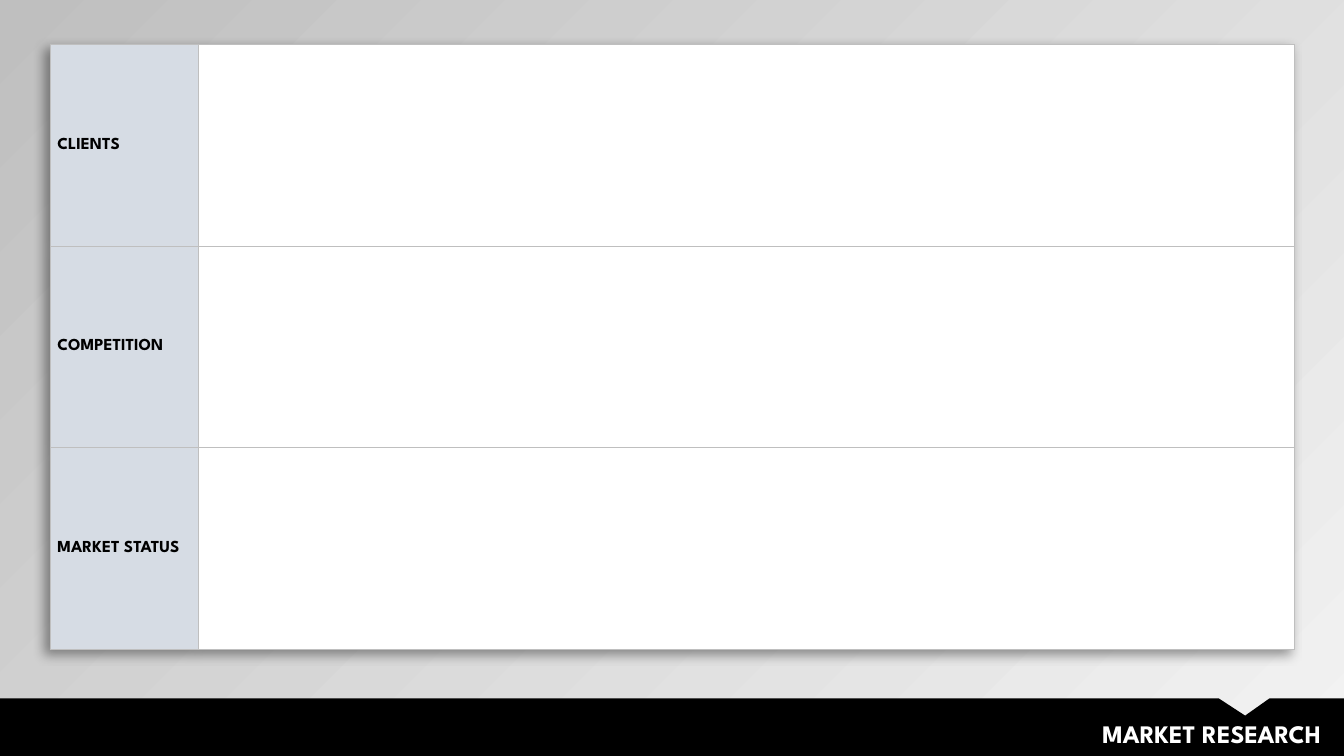
from lxml.etree import SubElement
from pptx import Presentation
from pptx.dml.color import RGBColor
from pptx.enum.text import MSO_ANCHOR as Anchor, MSO_AUTO_SIZE as AutoSize, PP_ALIGN as Align
from pptx.oxml import parse_xml
from pptx.oxml.ns import nsdecls, qn
from pptx.util import Inches, Pt

TITLE = "MARKET RESEARCH"
TOPICS = ["CLIENTS", "COMPETITION", "MARKET STATUS"]
FONT = "League Spartan"
COLORS = {
    "light": "F2F2F2",
    "grey": "BFBFBF",
    "label": "D6DCE4",
    "white": "FFFFFF",
    "black": "000000",
}
SLIDE_W, SLIDE_H = 13.33, 7.5
GRID_LEFT, GRID_TOP = 0.5, 0.44
COLUMN_WIDTHS = [1.47, 10.87]
ROW_HEIGHT = 2
BAND_TOP = 6.93
NOTCH = [(12.09, BAND_TOP), (12.35, 7.1), (12.59, BAND_TOP)]


def rgb(name):
    return RGBColor.from_string(COLORS[name])


def style_text(paragraph, size, color):
    font = paragraph.font
    font.name, font.size, font.bold = FONT, Pt(size), True
    font.color.rgb = rgb(color)


def add_borders(cell):
    properties = cell._tc.get_or_add_tcPr()
    for position, side in enumerate(("lnL", "lnR", "lnT", "lnB")):
        border = parse_xml(
            f'<a:{side} {nsdecls("a")} w="{Pt(0.5)}"><a:solidFill>'
            f'<a:srgbClr val="{COLORS["grey"]}"/></a:solidFill></a:{side}>'
        )
        properties.insert(position, border)


def add_shadow(table):
    effects = parse_xml(
        f'<a:effectLst {nsdecls("a")}>'
        f'<a:outerShdw blurRad="{Pt(8)}" dist="{Pt(5)}" dir="8100000" algn="tr" rotWithShape="0">'
        f'<a:srgbClr val="{COLORS["black"]}"><a:alpha val="40000"/></a:srgbClr>'
        '</a:outerShdw></a:effectLst>'
    )
    table._tbl.tblPr.insert(0, effects)


def add_research_grid(slide):
    table = slide.shapes.add_table(
        len(TOPICS), len(COLUMN_WIDTHS), Inches(GRID_LEFT), Inches(GRID_TOP),
        Inches(sum(COLUMN_WIDTHS)), Inches(ROW_HEIGHT * len(TOPICS)),
    ).table
    table.first_row = table.horz_banding = False
    for column, width in zip(table.columns, COLUMN_WIDTHS):
        column.width = Inches(width)
    for row, topic in enumerate(TOPICS):
        for col, (text, fill) in enumerate([(topic, "label"), ("", "white")]):
            cell = table.cell(row, col)
            cell.text = text
            cell.vertical_anchor = Anchor.MIDDLE
            cell.margin_left = cell.margin_right = Inches(0.07)
            cell.margin_top = cell.margin_bottom = 0
            cell.fill.solid()
            cell.fill.fore_color.rgb = rgb(fill)
            style_text(cell.text_frame.paragraphs[0], 12, "black")
            add_borders(cell)
    add_shadow(table)


def add_footer(slide):
    corners = [(SLIDE_W, BAND_TOP), (SLIDE_W, SLIDE_H), (0, SLIDE_H)]
    outline = slide.shapes.build_freeform(0, Inches(BAND_TOP))
    outline.add_line_segments([(Inches(x), Inches(y)) for x, y in NOTCH + corners])
    band = outline.convert_to_shape()
    band.shadow.inherit = False
    band.fill.solid()
    band.fill.fore_color.rgb = rgb("black")
    band.line.fill.background()

    title = slide.shapes.add_textbox(Inches(4.14), Inches(7.08), Inches(9.06), Inches(0.4))
    frame = title.text_frame
    frame.word_wrap = True
    frame.auto_size = AutoSize.SHAPE_TO_FIT_TEXT
    frame.text = TITLE
    frame.paragraphs[0].alignment = Align.RIGHT
    style_text(frame.paragraphs[0], 18, "white")


def main():
    deck = Presentation()
    deck.slide_width, deck.slide_height = Inches(SLIDE_W), Inches(SLIDE_H)
    slide = deck.slides.add_slide(deck.slide_layouts[6])
    backdrop = slide.background.fill
    backdrop.gradient()
    backdrop.gradient_angle = 135
    for stop, color in zip(backdrop.gradient_stops, ("light", "grey")):
        stop.color.rgb = rgb(color)
    add_research_grid(slide)
    add_footer(slide)
    deck.save("out.pptx")


if __name__ == "__main__":
    main()
